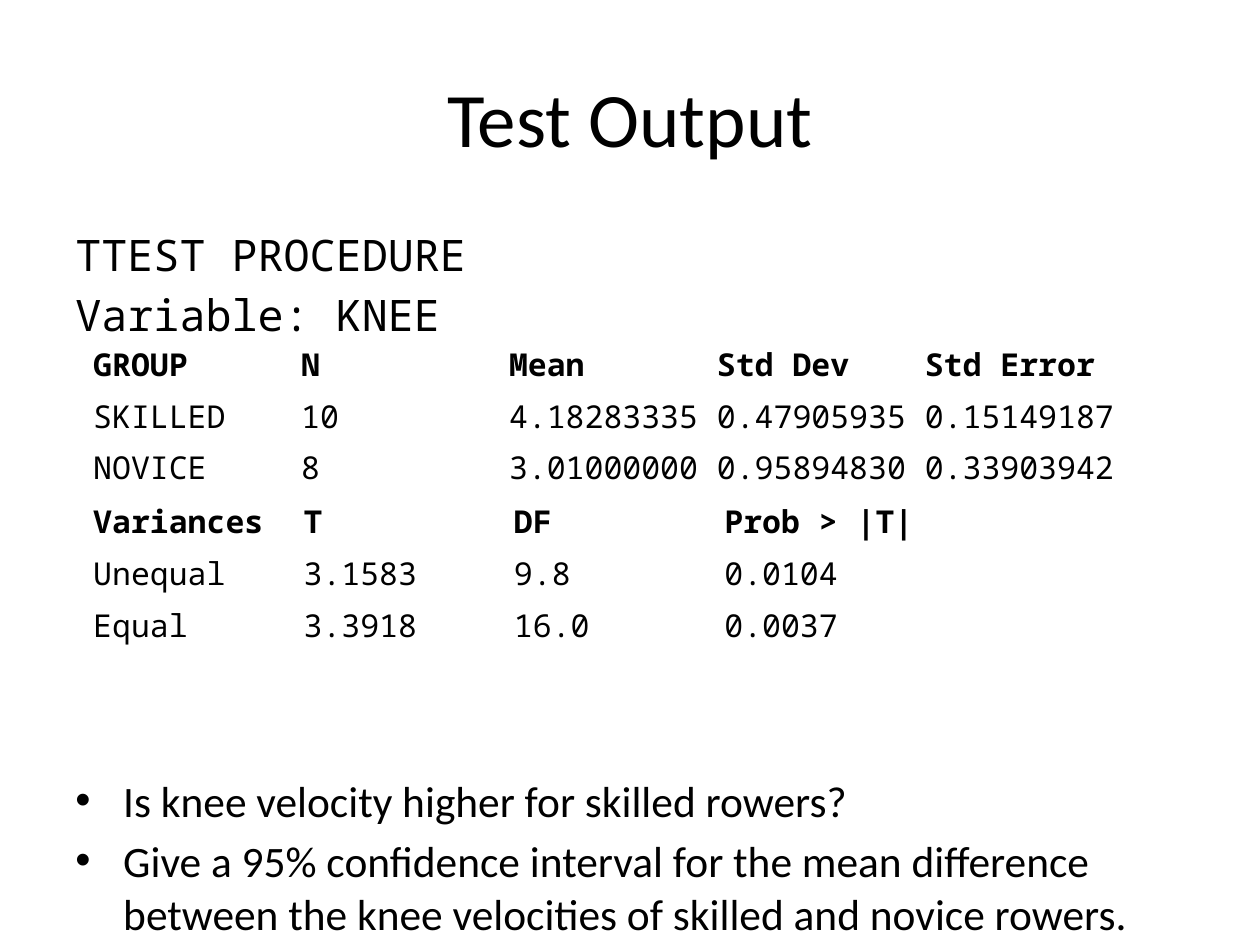
from lxml import etree
from pptx import Presentation
from pptx import util as u
from pptx.dml import color
from pptx.enum import text
from pptx.oxml import ns

SANS, MONO = "Calibri", "Noto Sans Mono"
BLACK, WHITE = "000000", "FFFFFF"


def rgb(value):
    return color.RGBColor.from_string(value)


class SlideBuilder:
    body_size = 24.8
    table_size = 18
    row_height = 0.41

    def __init__(self, presentation):
        self.slide = presentation.slides.add_slide(presentation.slide_layouts[5])
        self.slide.background.fill.solid()
        self.slide.background.fill.fore_color.rgb = rgb(WHITE)

    def format_runs(self, paragraph, font, size, bold=False):
        for run in paragraph.runs:
            run.font.name = font
            run.font.size = u.Pt(size)
            run.font.bold = bold
            run.font.color.rgb = rgb(BLACK)

    def place(self, shape, left, top, width, height):
        shape.left, shape.top = u.Inches(left), u.Inches(top)
        shape.width, shape.height = u.Inches(width), u.Inches(height)

    def title(self, wording, *box):
        shape = self.slide.shapes.title
        self.place(shape, *box)
        frame = shape.text_frame
        frame.text = wording
        frame.vertical_anchor = text.MSO_ANCHOR.MIDDLE
        frame.paragraphs[0].alignment = text.PP_ALIGN.CENTER
        self.format_runs(frame.paragraphs[0], SANS, 44)

    def body(self, lines, *box):
        """Each line is (wording, font, points before, bulleted)."""
        shape = self.slide.shapes.add_textbox(*map(u.Inches, box))
        frame = shape.text_frame
        frame.word_wrap = True
        frame.text = "\n".join(line[0] for line in lines)
        for paragraph, (_, font, before, bulleted) in zip(frame.paragraphs, lines):
            paragraph.line_spacing = u.Pt(30.3)
            paragraph.space_before = u.Pt(before)
            self.format_runs(paragraph, font, self.body_size)
            if bulleted:
                self.bullet(paragraph)

    def bullet(self, paragraph):
        properties = paragraph._p.get_or_add_pPr()
        properties.set("marL", str(u.Inches(0.38)))
        properties.set("indent", str(-u.Inches(0.38)))
        etree.SubElement(properties, ns.qn("a:buFont")).set("typeface", "Arial")
        etree.SubElement(properties, ns.qn("a:buChar")).set("char", "•")

    def table(self, rows, left, top, column_width):
        width, height = column_width * len(rows[0]), self.row_height * len(rows)
        box = map(u.Inches, (left, top, width, height))
        table = self.slide.shapes.add_table(len(rows), len(rows[0]), *box).table
        for column in table.columns:
            column.width = u.Inches(column_width)
        for row_index, values in enumerate(rows):
            table.rows[row_index].height = u.Inches(self.row_height)
            for column_index, value in enumerate(values):
                self.cell(table.cell(row_index, column_index), value, row_index)

    def cell(self, cell, value, row_index):
        cell.margin_left = cell.margin_right = u.Inches(0.07)
        cell.margin_top = cell.margin_bottom = 0
        cell.text_frame.text = value
        paragraph = cell.text_frame.paragraphs[0]
        paragraph.line_spacing = 1.15
        self.format_runs(paragraph, MONO, self.table_size, bold=row_index == 0)
        # Borders come before the fill in the cell properties
        properties = cell._tc.get_or_add_tcPr()
        thick_side = {0: "B", 1: "T"}.get(row_index)
        for side in "LRTB":
            line = etree.SubElement(properties, ns.qn(f"a:ln{side}"))
            line.set("w", str(u.Pt(3 if side == thick_side else 1)))
            fill = etree.SubElement(line, ns.qn("a:solidFill"))
            etree.SubElement(fill, ns.qn("a:srgbClr")).set("val", WHITE)
        cell.fill.solid()
        cell.fill.fore_color.rgb = rgb(WHITE)


def main():
    presentation = Presentation()
    presentation.slide_width, presentation.slide_height = u.Inches(10), u.Inches(7.5)
    builder = SlideBuilder(presentation)

    builder.title("Test Output", 0.5, 0.3, 9, 1.25)

    # Heading lines and questions, with room for the tables between them
    builder.body([
        ("TTEST PROCEDURE", MONO, 4, False),
        ("Variable: KNEE", MONO, 4, False),
        ("Is knee velocity higher for skilled rowers?", SANS, 247.4, True),
        ("Give a 95% confidence interval for the mean difference between "
         "the knee velocities of skilled and novice rowers.", SANS, 4, True),
    ], 0.5, 1.75, 9, 4.95)

    # Group statistics
    builder.table([
        ["GROUP", "N", "Mean", "Std Dev", "Std Error"],
        ["SKILLED", "10", "4.18283335", "0.47905935", "0.15149187"],
        ["NOVICE", "8", "3.01000000", "0.95894830", "0.33903942"],
    ], 0.67, 2.67, 1.65)

    # Test results
    builder.table([
        ["Variances", "T", "DF", "Prob > |T|"],
        ["Unequal", "3.1583", "9.8", "0.0104"],
        ["Equal", "3.3918", "16.0", "0.0037"],
    ], 0.67, 3.92, 1.67)

    presentation.save("out.pptx")


if __name__ == "__main__":
    main()
